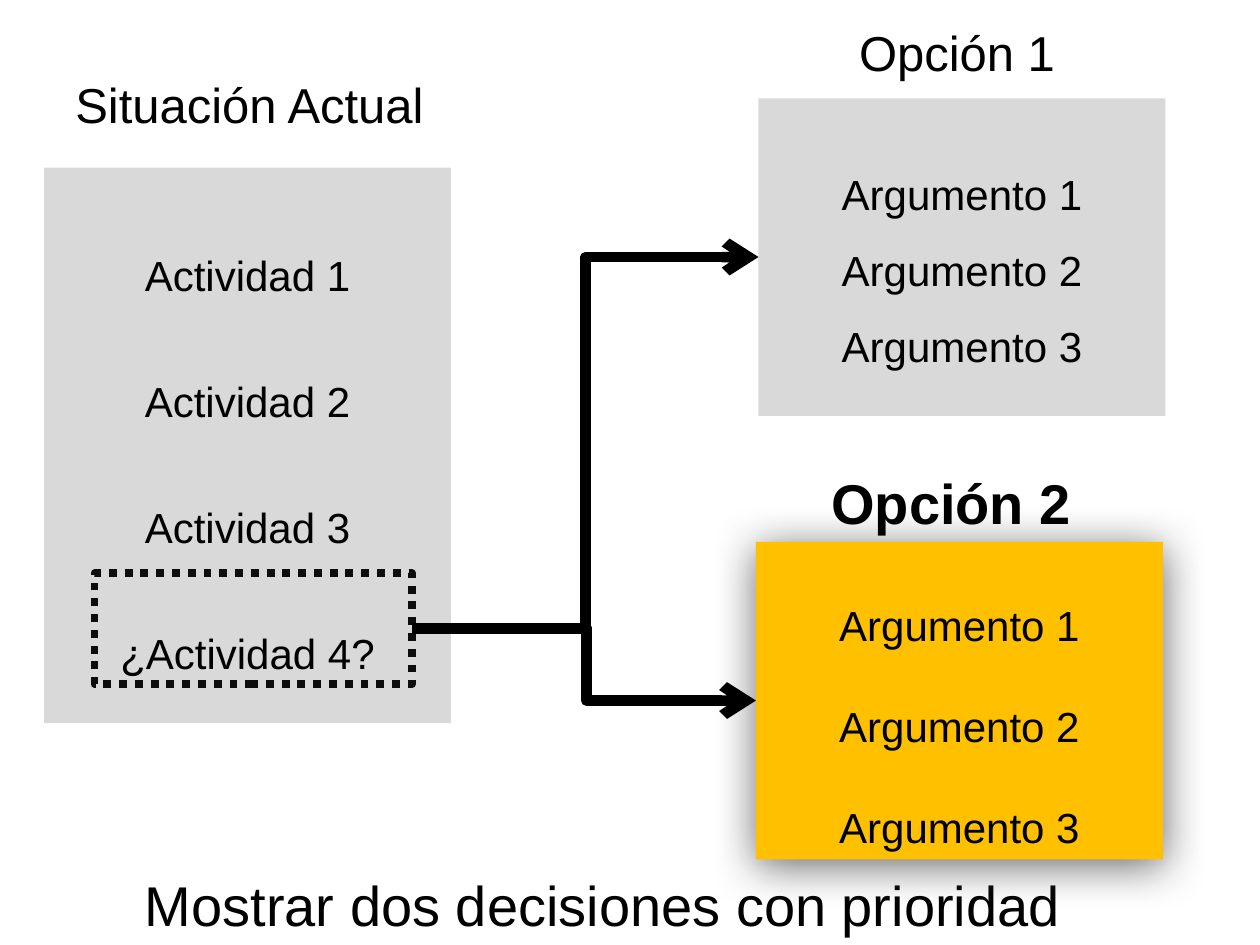
from dataclasses import dataclass
from typing import Any

from lxml.etree import SubElement
from pptx import Presentation
from pptx.dml.color import RGBColor
from pptx.enum.dml import MSO_LINE
from pptx.enum.shapes import MSO_CONNECTOR, MSO_SHAPE
from pptx.enum.text import MSO_ANCHOR, MSO_AUTO_SIZE, PP_ALIGN
from pptx.oxml.ns import qn
from pptx.util import Inches, Pt

COLORS = {
    "text": "000000",
    "panel": "D9D9D9",
    "priority": "FFC000",
    "shadow": "595959",
    "outline": "0D0D0D",
    "arrow": "000000",
}
FONT = "Arial"
SLIDE_WIDTH, SLIDE_HEIGHT = Inches(10), Inches(7.5)
COLUMN = SLIDE_WIDTH / 100
ROW = SLIDE_HEIGHT / 75


@dataclass(frozen=True)
class Area:
    column: float
    row: float
    columns: float
    rows: float

    def lengths(self) -> tuple[int, int, int, int]:
        return (round(self.column * COLUMN), round(self.row * ROW),
                round(self.columns * COLUMN), round(self.rows * ROW))


@dataclass(frozen=True)
class Panel:
    area: Area
    lines: tuple[str, ...]
    spacing: float
    fill: str = "panel"
    anchor: MSO_ANCHOR = MSO_ANCHOR.MIDDLE


@dataclass(frozen=True)
class Heading:
    area: Area
    text: str
    size: int = 28
    bold: bool = False


def numbered(word: str, count: int) -> tuple[str, ...]:
    return tuple(f"{word} {number}" for number in range(1, count + 1))


ARGUMENTS = numbered("Argumento", 3)
SITUATION = Panel(Area(3.5, 13.3, 32.3, 44.1),
                  numbered("Actividad", 3) + ("¿Actividad 4?",), 2.5,
                  anchor=MSO_ANCHOR.TOP)
OPTIONS = (
    Panel(Area(60.2, 7.8, 32.3, 25.2), ARGUMENTS, 1.5),
    Panel(Area(60, 43, 32.3, 25.2), ARGUMENTS, 2, fill="priority"),
)
BENDS = (50000, 50700)
HEADINGS = (
    Heading(Area(5, 5.4, 30, 5.7), "Situación Actual"),
    Heading(Area(67.2, 1.3, 17.8, 5.7), "Opción 1"),
    Heading(Area(65, 36.7, 21.2, 6.4), "Opción 2", size=32, bold=True),
)
TITLE = Heading(Area(10.5, 68.6, 78.5, 6.4),
                "Mostrar dos decisiones con prioridad", size=32)
DOUBTFUL_ACTIVITY = Area(7.5, 45.5, 25.2, 8.8)


def color(name: str) -> RGBColor:
    return RGBColor.from_string(COLORS[name])


def write(frame: Any, *lines: str, size: int = 24, bold: bool = False,
          align: PP_ALIGN = PP_ALIGN.LEFT, spacing: float = 1,
          anchor: MSO_ANCHOR = MSO_ANCHOR.TOP, wrap: bool = False,
          fit: MSO_AUTO_SIZE = MSO_AUTO_SIZE.SHAPE_TO_FIT_TEXT) -> None:
    frame.word_wrap = wrap
    frame.auto_size = fit
    frame.vertical_anchor = anchor
    for index, line in enumerate(lines):
        paragraph = frame.add_paragraph() if index else frame.paragraphs[0]
        paragraph.alignment = align
        paragraph.line_spacing = float(spacing)
        run = paragraph.add_run()
        run.text = line
        run.font.name = FONT
        run.font.size = Pt(size)
        run.font.bold = bold
        run.font.color.rgb = color("text")


def draw_panel(slide: Any, panel: Panel) -> Any:
    shape = slide.shapes.add_shape(MSO_SHAPE.RECTANGLE, *panel.area.lengths())
    shape.shadow.inherit = False
    shape.fill.solid()
    shape.fill.fore_color.rgb = color(panel.fill)
    shape.line.fill.background()
    write(shape.text_frame, *panel.lines, align=PP_ALIGN.CENTER,
          spacing=panel.spacing, anchor=panel.anchor, wrap=True,
          fit=MSO_AUTO_SIZE.NONE)
    return shape


def add_glow_shadow(shape: Any) -> None:
    effects = shape._element.spPr.find(qn("a:effectLst"))
    shadow = SubElement(effects, qn("a:outerShdw"), blurRad=str(Pt(25)),
                        dist=str(Pt(4)), dir="5400000", algn="ctr",
                        rotWithShape="0")
    tint = SubElement(shadow, qn("a:srgbClr"), val=COLORS["shadow"])
    SubElement(tint, qn("a:alpha"), val="89000")


def draw_heading(slide: Any, heading: Heading) -> None:
    box = slide.shapes.add_textbox(*heading.area.lengths())
    write(box.text_frame, heading.text, size=heading.size, bold=heading.bold)


def draw_title(slide: Any, heading: Heading) -> None:
    title = slide.shapes.title
    title.left, title.top, title.width, title.height = heading.area.lengths()
    write(title.text_frame, heading.text, size=heading.size)


def draw_dotted_box(slide: Any, area: Area) -> Any:
    shape = slide.shapes.add_shape(MSO_SHAPE.RECTANGLE, *area.lengths())
    shape.shadow.inherit = False
    shape.fill.background()
    shape.line.color.rgb = color("outline")
    shape.line.width = Pt(4.5)
    shape.line.dash_style = MSO_LINE.ROUND_DOT
    return shape


def draw_arrow(slide: Any, source: Any, target: Any, bend: int) -> None:
    connector = slide.shapes.add_connector(
        MSO_CONNECTOR.ELBOW,
        source.left + source.width, source.top + source.height // 2,
        target.left, target.top + target.height // 2)
    connector.begin_connect(source, 3)
    connector.end_connect(target, 1)
    connector.line.color.rgb = color("arrow")
    connector.line.width = Pt(6)
    properties = connector._element.spPr
    guides = properties.find(qn("a:prstGeom")).find(qn("a:avLst"))
    SubElement(guides, qn("a:gd"), name="adj1", fmla=f"val {bend}")
    SubElement(properties.find(qn("a:ln")), qn("a:tailEnd"), type="arrow")
    SubElement(properties, qn("a:effectLst"))


def main() -> None:
    presentation = Presentation()
    presentation.slide_width = SLIDE_WIDTH
    presentation.slide_height = SLIDE_HEIGHT
    slide = presentation.slides.add_slide(presentation.slide_layouts[5])
    draw_title(slide, TITLE)
    draw_panel(slide, SITUATION)
    options = [draw_panel(slide, option) for option in OPTIONS]
    add_glow_shadow(options[-1])
    for heading in HEADINGS:
        draw_heading(slide, heading)
    doubtful_activity = draw_dotted_box(slide, DOUBTFUL_ACTIVITY)
    for option, bend in zip(options, BENDS):
        draw_arrow(slide, doubtful_activity, option, bend)
    presentation.save("out.pptx")


if __name__ == "__main__":
    main()
